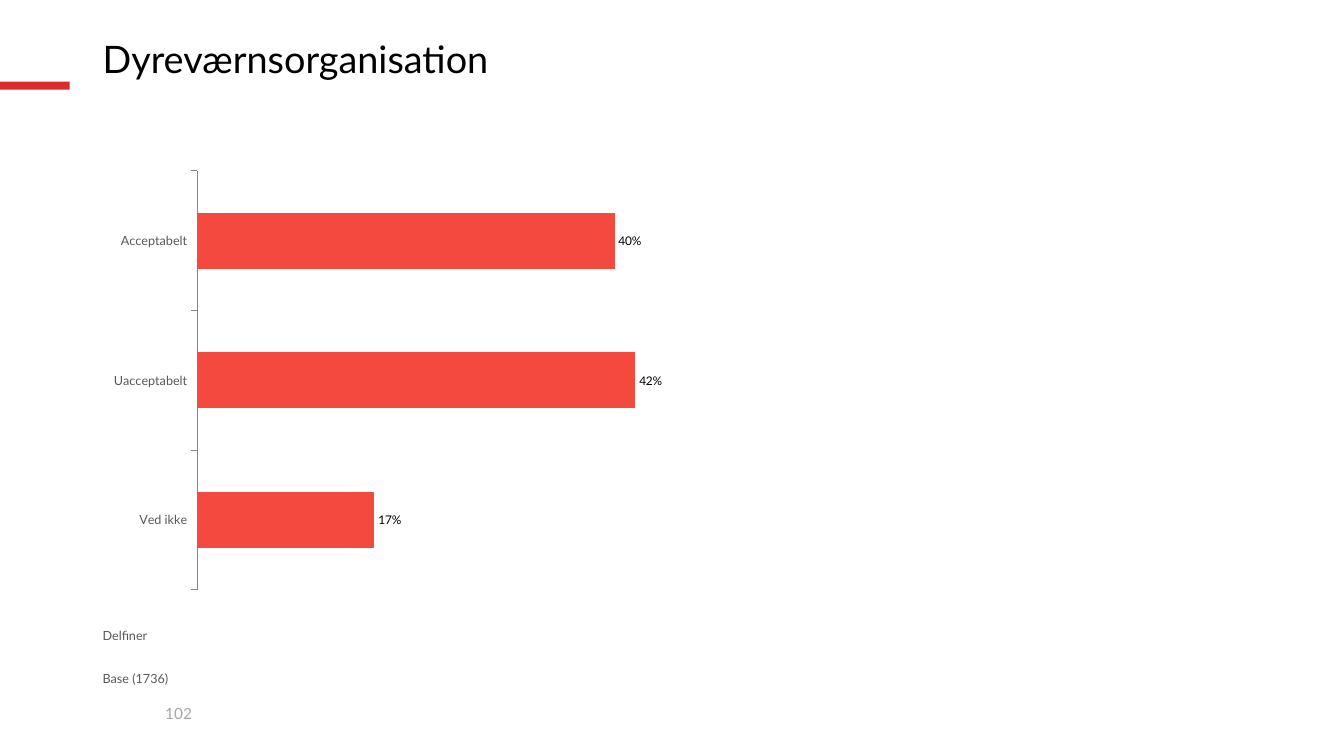
from dataclasses import dataclass

from lxml import etree
from pptx import Presentation
from pptx import util as u
from pptx.chart import data as chart_data
from pptx.dml import color
from pptx.enum import chart as chart_enum
from pptx.enum import shapes, text
from pptx.oxml import ns


@dataclass(frozen=True)
class Theme:
    font: str = "Lato"
    accent: str = "DA2C2D"
    bar: str = "F3493E"
    ink: str = "000000"
    muted: str = "595959"
    pale: str = "A6A6A6"
    axis: str = "868686"
    title_size: float = 27
    chart_size: float = 18
    number_size: float = 11
    note_size: float = 9
    label_size: float = 8.5


@dataclass(frozen=True)
class Box:
    left: float
    top: float
    width: float
    height: float

    def inches(self) -> tuple:
        return tuple(u.Inches(n) for n in (self.left, self.top, self.width, self.height))


@dataclass(frozen=True)
class Label:
    words: str
    box: Box
    size: float
    color: str
    anchor: text.MSO_ANCHOR = text.MSO_ANCHOR.TOP
    line_spacing: float = 1.0


THEME = Theme()
LEFT, WIDTH = 0.92, 11.5
ACCENT_BOX = Box(0, 0.81, 0.69, 0.08)
CHART_BOX = Box(LEFT, 1.61, WIDTH, 4.33)
PLOT_LAYOUT = {"x": 0.09, "y": 0.02, "w": 0.9, "h": 0.96}
ANSWERS = {"Ved ikke": 0.17, "Uacceptabelt": 0.42, "Acceptabelt": 0.4}
LABELS = [
    Label("102", Box(1.54, 6.94, 0.68, 0.29), THEME.number_size, THEME.pale),
    Label("Dyreværnsorganisation", Box(LEFT, 0.35, WIDTH, 0.51), THEME.title_size,
          THEME.ink, text.MSO_ANCHOR.MIDDLE, 0.9),
    Label("Delfiner", Box(LEFT, 6.18, WIDTH, 0.43), THEME.note_size, THEME.muted),
    Label("Base (1736)", Box(LEFT, 6.61, WIDTH, 0.28), THEME.note_size, THEME.muted),
]


def style_font(font, size: float, rgb: str) -> None:
    font.name = THEME.font
    font.size = u.Pt(size)
    font.color.rgb = color.RGBColor.from_string(rgb)


def draw_accent(slide) -> None:
    shape = slide.shapes.add_shape(shapes.MSO_SHAPE.RECTANGLE, *ACCENT_BOX.inches())
    shape.shadow.inherit = False
    shape.fill.solid()
    shape.fill.fore_color.rgb = color.RGBColor.from_string(THEME.accent)
    shape.line.fill.background()


def draw_label(slide, label: Label) -> None:
    frame = slide.shapes.add_textbox(*label.box.inches()).text_frame
    frame.word_wrap = True
    frame.vertical_anchor = label.anchor
    paragraph = frame.paragraphs[0]
    paragraph.line_spacing = label.line_spacing
    run = paragraph.add_run()
    run.text = label.words
    style_font(run.font, label.size, label.color)


def fix_plot_layout(chart) -> None:
    plot_area = chart.element.find(f".//{ns.qn('c:plotArea')}")
    for existing in plot_area.findall(ns.qn("c:layout")):
        plot_area.remove(existing)
    layout = etree.Element(ns.qn("c:layout"))
    plot_area.insert(0, layout)
    manual = etree.SubElement(layout, ns.qn("c:manualLayout"))
    settings = {"layoutTarget": "inner", "xMode": "edge", "yMode": "edge", **PLOT_LAYOUT}
    for name, value in settings.items():
        etree.SubElement(manual, ns.qn(f"c:{name}"), val=str(value))


def draw_chart(slide) -> None:
    answers = chart_data.CategoryChartData(number_format="0%")
    answers.categories = list(ANSWERS)
    answers.add_series("Series 1", list(ANSWERS.values()))
    chart = slide.shapes.add_chart(
        chart_enum.XL_CHART_TYPE.BAR_CLUSTERED, *CHART_BOX.inches(), answers
    ).chart
    chart.has_legend = False
    chart.has_title = False
    style_font(chart.font, THEME.chart_size, THEME.ink)
    fix_plot_layout(chart)

    category_axis = chart.category_axis
    category_axis.tick_label_position = chart_enum.XL_TICK_LABEL_POSITION.LOW
    category_axis.major_tick_mark = chart_enum.XL_TICK_MARK.OUTSIDE
    category_axis.format.line.color.rgb = color.RGBColor.from_string(THEME.axis)
    category_axis.format.line.width = u.Pt(0.75)
    style_font(category_axis.tick_labels.font, THEME.note_size, THEME.muted)

    value_axis = chart.value_axis
    value_axis.minimum_scale = 0
    value_axis.maximum_scale = 1
    value_axis.major_unit = 0.1
    value_axis.has_major_gridlines = False
    value_axis.tick_labels.number_format = "0.00%"
    value_axis.tick_labels.number_format_is_linked = False
    value_axis.visible = False

    plot = chart.plots[0]
    plot.gap_width = 150
    plot.overlap = -10
    plot.vary_by_categories = False
    series = plot.series[0]
    series.format.fill.solid()
    series.format.fill.fore_color.rgb = color.RGBColor.from_string(THEME.bar)
    data_labels = series.data_labels
    data_labels.show_value = True
    data_labels.number_format = "0%"
    data_labels.number_format_is_linked = False
    data_labels.position = chart_enum.XL_LABEL_POSITION.OUTSIDE_END
    style_font(data_labels.font, THEME.label_size, THEME.ink)


def main() -> None:
    presentation = Presentation()
    presentation.slide_width = u.Inches(13.33)
    presentation.slide_height = u.Inches(7.5)
    slide = presentation.slides.add_slide(presentation.slide_layouts[6])
    draw_accent(slide)
    for label in LABELS:
        draw_label(slide, label)
    draw_chart(slide)
    presentation.save("out.pptx")


if __name__ == "__main__":
    main()
